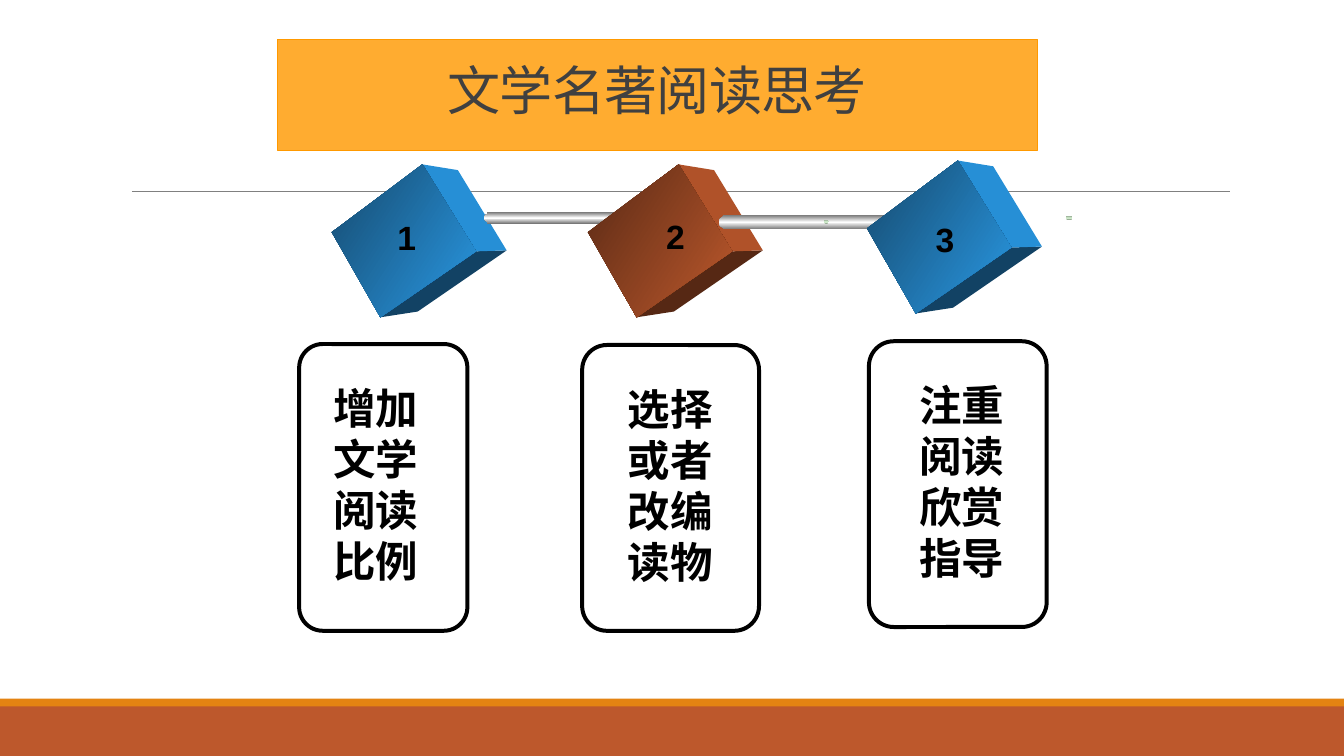
from copy import deepcopy

from lxml.etree import SubElement
from pptx import Presentation
from pptx.dml.color import RGBColor
from pptx.enum.shapes import MSO_CONNECTOR as Connector, MSO_SHAPE as Shape
from pptx.enum.text import MSO_ANCHOR as Anchor, PP_ALIGN as Align
from pptx.oxml.ns import qn
from pptx.util import Inches, Pt

COLORS = {
    "rust": "BD582C", "amber": "E48312", "banner": "FF9900",
    "title": "404040", "rule": "808080", "ink": "000000",
    "steel": "767676", "shine": "FFFFFF", "moss": "93A790", "mint": "CEEACA",
}
CUBE_COLORS = {
    "blue": {"dark": "164A6E", "light": "2998E3", "side": "268FD6", "base": "124264"},
    "rust": {"dark": "592A15", "light": "BD582C", "side": "B05229", "base": "562814"},
}
CUBE_FACES = {
    "base": [(151, 91), (183, 90), (90, 154), (51, 160)],
    "side": [(95, 0), (132, 6), (183, 90), (151, 91)],
    "front": [(0, 71), (95, 0), (151, 91), (51, 160)],
}
COLUMNS, ROWS = 1406, 791
CELL = Inches(0.01)

presentation = Presentation()
presentation.slide_width = COLUMNS * CELL
presentation.slide_height = ROWS * CELL
slide = presentation.slides.add_slide(presentation.slide_layouts[5])
shapes = slide.shapes


def add_block(kind, box, color=None, rim=None):
    block = shapes.add_shape(kind, *(cells * CELL for cells in box))
    block.shadow.inherit = False
    block.line.fill.background()
    if rim:
        block.fill.gradient()
        block.fill.gradient_angle = 270
        stops = block.fill.gradient_stops
        stops[0].color.rgb = RGBColor.from_string(rim)
        stops[1].color.rgb = RGBColor.from_string(color)
        stops[1].position = 0.5
        stop_list = block._element.xpath(".//a:gsLst")[0]
        last_stop = deepcopy(stop_list[0])
        last_stop.set("pos", "100000")
        stop_list.append(last_stop)
    elif color:
        block.fill.solid()
        block.fill.fore_color.rgb = RGBColor.from_string(color)
    else:
        block.fill.background()
    return block


def add_label(box, lines, size):
    label = shapes.add_textbox(*(cells * CELL for cells in box))
    frame = label.text_frame
    frame.word_wrap = True
    frame.text = "\n".join(lines)
    for paragraph in frame.paragraphs:
        paragraph.font.name = "Arial"
        paragraph.font.size = Pt(size)
        paragraph.font.bold = True
        paragraph.font.color.rgb = RGBColor.from_string(COLORS["ink"])


add_block(Shape.RECTANGLE, (0, 738, COLUMNS, ROWS - 738), COLORS["rust"])
add_block(Shape.RECTANGLE, (0, 731, COLUMNS, 8), COLORS["amber"])

rule = shapes.add_connector(Connector.STRAIGHT, 138 * CELL, 200 * CELL, 1287 * CELL, 200 * CELL)
rule.line.color.rgb = RGBColor.from_string(COLORS["rule"])
rule.line.width = Pt(0.5)
SubElement(rule._element.spPr, qn("a:effectLst"))

title = shapes.title
title.left, title.top, title.width, title.height = (cells * CELL for cells in (290, 41, 795, 116))
title.fill.solid()
title.fill.fore_color.rgb = RGBColor.from_string(COLORS["banner"])
banner_color = title._element.xpath("./p:spPr/a:solidFill/a:srgbClr")[0]
SubElement(banner_color, qn("a:alpha"), val="81000")
title.line.color.rgb = RGBColor.from_string(COLORS["banner"])
title.line.width = Pt(0.75)
title.text_frame.text = "文学名著阅读思考"
title.text_frame.vertical_anchor = Anchor.MIDDLE
heading = title.text_frame.paragraphs[0]
heading.alignment = Align.CENTER
heading.line_spacing = 0.85
heading.font.name = "Calibri"
heading.font.size = Pt(40)
heading.font.color.rgb = RGBColor.from_string(COLORS["title"])
heading.runs[0].font._element.set("spc", "-50")

stages = [
    {"cube": (347, 172), "color": "blue", "number": (406, 222, 51, 53),
     "card": (313, 360, 176, 300), "text": (339, 395, 176, 226),
     "lines": ["增加", "文学", "阅读", "比例"], "rod": (506, 222, 27, 137, 12)},
    {"cube": (615, 172), "color": "rust", "number": (687, 221, 36, 54),
     "card": (609, 361, 185, 299), "text": (647, 396, 135, 268),
     "lines": ["选择或者改编读物"], "rod": (752, 225, 20, 174, 15)},
    {"cube": (907, 168), "color": "blue", "number": (969, 224, 33, 53),
     "card": (909, 357, 186, 299), "text": (952, 392, 202, 226),
     "lines": ["注重", "阅读", "欣赏", "指导"], "rod": None},
]

for number, stage in enumerate(stages, start=1):
    card = add_block(Shape.ROUNDED_RECTANGLE, stage["card"])
    card.adjustments[0] = 0.14
    card.line.color.rgb = RGBColor.from_string(COLORS["ink"])
    card.line.width = Pt(3)

    palette = CUBE_COLORS[stage["color"]]
    left, top = stage["cube"]
    for name, points in CUBE_FACES.items():
        builder = shapes.build_freeform(*points[0], scale=CELL)
        builder.add_line_segments(points[1:], close=True)
        face = builder.convert_to_shape(left * CELL, top * CELL)
        face.shadow.inherit = False
        face.line.fill.background()
        if name == "front":
            face.fill.gradient()
            face.fill.gradient_angle = 327
            for stop, shade in zip(face.fill.gradient_stops, ("dark", "light")):
                stop.color.rgb = RGBColor.from_string(palette[shade])
        else:
            face.fill.solid()
            face.fill.fore_color.rgb = RGBColor.from_string(palette[name])

    if stage["rod"]:
        left, top, cap, length, height = stage["rod"]
        for kind, box in (
            (Shape.OVAL, (left, top, cap, height)),
            (Shape.RECTANGLE, (left + 4, top, length - 4, height)),
        ):
            add_block(kind, box, COLORS["shine"], COLORS["steel"])

    add_label(stage["text"], stage["lines"], 32)
    add_label(stage["number"], [str(number)], 25.3)

for left, top, width in ((862, 230, 5), (1115, 226, 7)):
    add_block(Shape.OVAL, (left, top, width, 4), COLORS["mint"], COLORS["moss"])

presentation.save("out.pptx")
